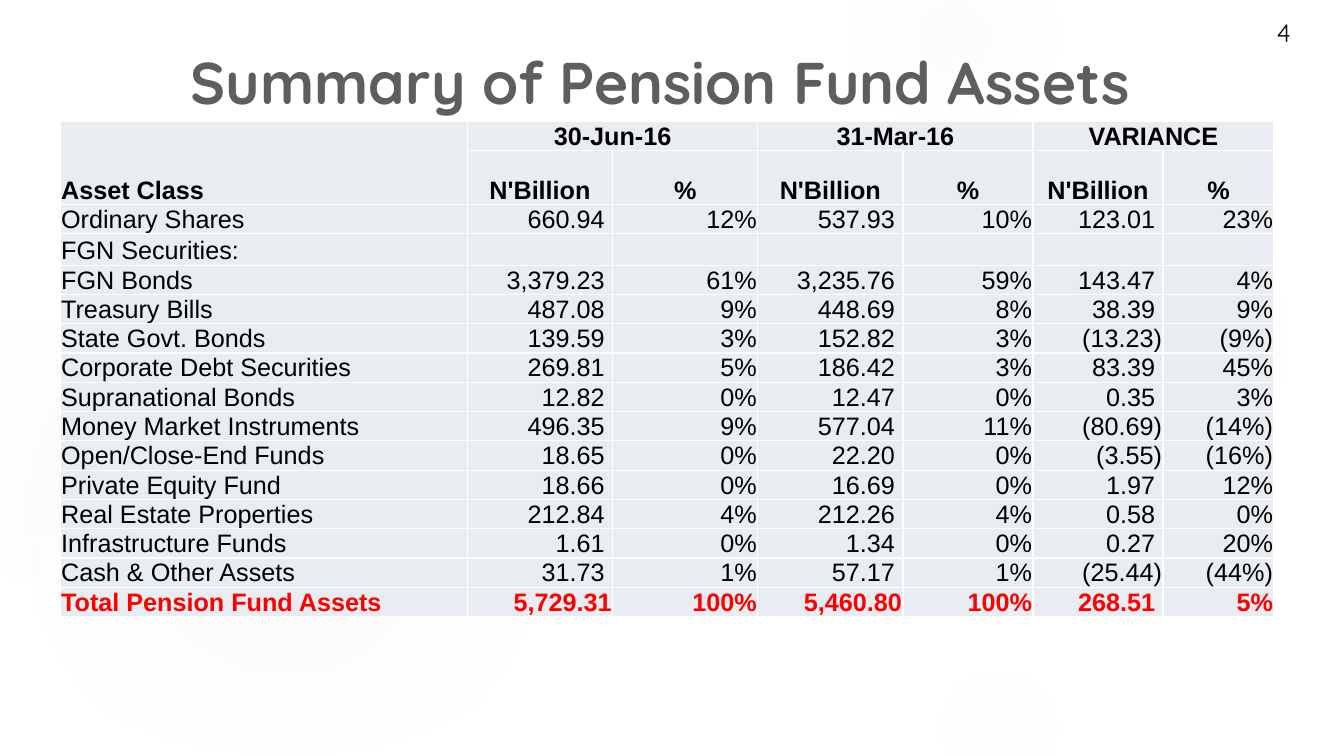
from dataclasses import dataclass

import pptx
import pptx.dml.color
import pptx.enum.shapes
import pptx.enum.text
import pptx.oxml
import pptx.oxml.ns
import pptx.util

Pt = pptx.util.Pt
Align = pptx.enum.text.PP_ALIGN
Anchor = pptx.enum.text.MSO_ANCHOR

BLACK = pptx.dml.color.RGBColor(0x00, 0x00, 0x00)
WHITE = pptx.dml.color.RGBColor(0xFF, 0xFF, 0xFF)
RED = pptx.dml.color.RGBColor(0xFF, 0x00, 0x00)
TITLE_GREY = pptx.dml.color.RGBColor(0x5E, 0x5E, 0x5E)
GLOW_GREY = pptx.dml.color.RGBColor(0xEB, 0xEB, 0xEB)
CELL_FILL = pptx.dml.color.RGBColor(0xE9, 0xED, 0xF2)

HEADING_FONT = "Quicksand"
TABLE_FONT = "Arial"
CELL_MARGIN = 0.72
AMOUNT_MARGIN = 5.72  # keeps positive amounts clear of the closing bracket column
LINE_HEIGHT = 19.2  # lets the text fit the tight rows
ROW_HEIGHT = 20.92
SUBHEAD_HEIGHT = 38.4
COLUMN_WIDTHS = (290.9, 103.7, 103.7, 103.7, 92.9, 92.9, 79.2)


@dataclass(frozen=True)
class Glow:
    left: float
    top: float
    width: float
    height: float
    stops: tuple[tuple[int, int], ...]  # position and opacity, in percent


@dataclass(frozen=True)
class Asset:
    name: str
    figures: tuple[str, ...] = ("",) * 6


GLOWS = (
    Glow(661.7, 131.8, 295.9, 221.8, ((0, 7), (36, 6), (69, 0))),
    Glow(597.6, -36, 167.8, 126, ((0, 14), (36, 7), (73, 0))),
    Glow(661.7, 480.2, 103.7, 77.8, ((0, 9), (36, 5), (66, 0))),
    Glow(-15.8, 210.2, 439.9, 329.8, ((0, 11), (36, 10), (75, 0))),
    Glow(-87.8, 228.2, 247.7, 185.8, ((0, 8), (36, 8), (72, 0))),
)

PERIODS = ("30-Jun-16", "31-Mar-16", "VARIANCE")
ASSETS = (
    Asset("Ordinary Shares", ("660.94", "12%", "537.93", "10%", "123.01", "23%")),
    Asset("FGN Securities:"),
    Asset("FGN Bonds", ("3,379.23", "61%", "3,235.76", "59%", "143.47", "4%")),
    Asset("Treasury Bills", ("487.08", "9%", "448.69", "8%", "38.39", "9%")),
    Asset("State Govt. Bonds", ("139.59", "3%", "152.82", "3%", "(13.23)", "(9%)")),
    Asset("Corporate Debt Securities", ("269.81", "5%", "186.42", "3%", "83.39", "45%")),
    Asset("Supranational Bonds", ("12.82", "0%", "12.47", "0%", "0.35", "3%")),
    Asset("Money Market Instruments", ("496.35", "9%", "577.04", "11%", "(80.69)", "(14%)")),
    Asset("Open/Close-End Funds", ("18.65", "0%", "22.20", "0%", "(3.55)", "(16%)")),
    Asset("Private Equity Fund", ("18.66", "0%", "16.69", "0%", "1.97", "12%")),
    Asset("Real Estate Properties", ("212.84", "4%", "212.26", "4%", "0.58", "0%")),
    Asset("Infrastructure Funds", ("1.61", "0%", "1.34", "0%", "0.27", "20%")),
    Asset("Cash & Other Assets", ("31.73", "1%", "57.17", "1%", "(25.44)", "(44%)")),
)
TOTAL = Asset("Total Pension Fund Assets", ("5,729.31", "100%", "5,460.80", "100%", "268.51", "5%"))


def write(para, text: str, font: str, size: float, color, bold: bool = False, align=Align.LEFT) -> None:
    """Add one formatted run to a paragraph."""
    para.alignment = align
    span = para.add_run()
    span.text = text
    span.font.name = font
    span.font.size = Pt(size)
    span.font.bold = bold
    span.font.color.rgb = color


def draw_glow(page, glow: Glow) -> None:
    """Draw a soft radial disc behind the title."""
    disc = page.shapes.add_shape(
        pptx.enum.shapes.MSO_SHAPE.OVAL,
        Pt(glow.left), Pt(glow.top), Pt(glow.width), Pt(glow.height))
    disc.shadow.inherit = False
    disc.line.fill.background()
    disc.fill.background()
    stops = "".join(
        f'<a:gs pos="{position * 1000}"><a:srgbClr val="{GLOW_GREY}">'
        f'<a:alpha val="{opacity * 1000}"/></a:srgbClr></a:gs>'
        for position, opacity in glow.stops)
    gradient = pptx.oxml.parse_xml(
        f'<a:gradFill {pptx.oxml.ns.nsdecls("a")}><a:gsLst>{stops}</a:gsLst>'
        '<a:path path="circle"><a:fillToRect l="50000" t="50000" r="50000" b="50000"/>'
        '</a:path></a:gradFill>')
    properties = disc.element.spPr
    properties.replace(properties.find(pptx.oxml.ns.qn("a:noFill")), gradient)
    page.shapes.title.element.addprevious(disc.element)


def style_cell(cell) -> None:
    """Give a cell its white borders, fill, margins, line height and anchor."""
    properties = cell._tc.get_or_add_tcPr()
    for side in ("lnL", "lnR", "lnT", "lnB"):
        properties.append(pptx.oxml.parse_xml(
            f'<a:{side} {pptx.oxml.ns.nsdecls("a")} w="{Pt(1)}"><a:solidFill>'
            f'<a:srgbClr val="{WHITE}"/></a:solidFill></a:{side}>'))
    cell.fill.solid()
    cell.fill.fore_color.rgb = CELL_FILL
    cell.margin_left = cell.margin_right = cell.margin_top = Pt(CELL_MARGIN)
    cell.margin_bottom = Pt(0)
    cell.vertical_anchor = Anchor.BOTTOM
    cell.text_frame.paragraphs[0].line_spacing = Pt(LINE_HEIGHT)


def fill_cell(cell, text: str, align=Align.LEFT, bold: bool = False, color=BLACK) -> None:
    if text:
        write(cell.text_frame.paragraphs[0], text, TABLE_FONT, 18, color, bold, align)


def fill_asset(grid, row: int, asset: Asset, total: bool = False) -> None:
    """Write an asset name and its six figures in one table row."""
    look = {"bold": total, "color": RED if total else BLACK}
    fill_cell(grid.cell(row, 0), asset.name, **look)
    for column, figure in enumerate(asset.figures, 1):
        cell = grid.cell(row, column)
        fill_cell(cell, figure, Align.RIGHT, **look)
        is_amount = column % 2 == 1
        flush = figure.endswith(")") or (total and column < 5)
        if figure and is_amount and not flush:
            cell.margin_right = Pt(AMOUNT_MARGIN)


def add_asset_table(page) -> None:
    heights = [ROW_HEIGHT, SUBHEAD_HEIGHT] + [ROW_HEIGHT] * (len(ASSETS) + 1)
    frame = page.shapes.add_table(
        len(heights), len(COLUMN_WIDTHS), Pt(43), Pt(86.8),
        Pt(sum(COLUMN_WIDTHS)), Pt(sum(heights)))
    grid = frame.table
    grid.first_row = grid.horz_banding = False
    for column, width in zip(grid.columns, COLUMN_WIDTHS):
        column.width = Pt(width)
    for row, height in zip(grid.rows, heights):
        row.height = Pt(height)
    for cell in grid.iter_cells():
        style_cell(cell)

    # Two header rows
    grid.cell(0, 0).merge(grid.cell(1, 0))
    fill_cell(grid.cell(0, 0), "Asset Class", bold=True)
    for index, period in enumerate(PERIODS):
        column = 1 + 2 * index
        grid.cell(0, column).merge(grid.cell(0, column + 1))
        fill_cell(grid.cell(0, column), period, Align.CENTER, True)
        fill_cell(grid.cell(1, column), "N'Billion", Align.CENTER, True)
        fill_cell(grid.cell(1, column + 1), "%", Align.CENTER, True)

    # Asset rows and total
    for row, asset in enumerate(ASSETS, 2):
        fill_asset(grid, row, asset)
    fill_asset(grid, len(heights) - 1, TOTAL, total=True)


def main() -> None:
    deck = pptx.Presentation()
    deck.slide_width, deck.slide_height = Pt(960), Pt(540)
    page = deck.slides.add_slide(deck.slide_layouts[5])

    # Background
    for glow in GLOWS:
        draw_glow(page, glow)

    # Title
    title = page.shapes.title
    title.left, title.top, title.width, title.height = Pt(20.2), Pt(28.8), Pt(902.9), Pt(58.3)
    title.text_frame.vertical_anchor = Anchor.MIDDLE
    write(title.text_frame.paragraphs[0], "Summary of Pension Fund Assets",
          HEADING_FONT, 42, TITLE_GREY, True, Align.CENTER)

    # Page number
    box = page.shapes.add_textbox(Pt(905), Pt(8.6), Pt(36.7), Pt(28.8))
    box.text_frame.word_wrap = True
    write(box.text_frame.paragraphs[0], "4", HEADING_FONT, 18, BLACK)

    add_asset_table(page)
    deck.save("out.pptx")


if __name__ == "__main__":
    main()
